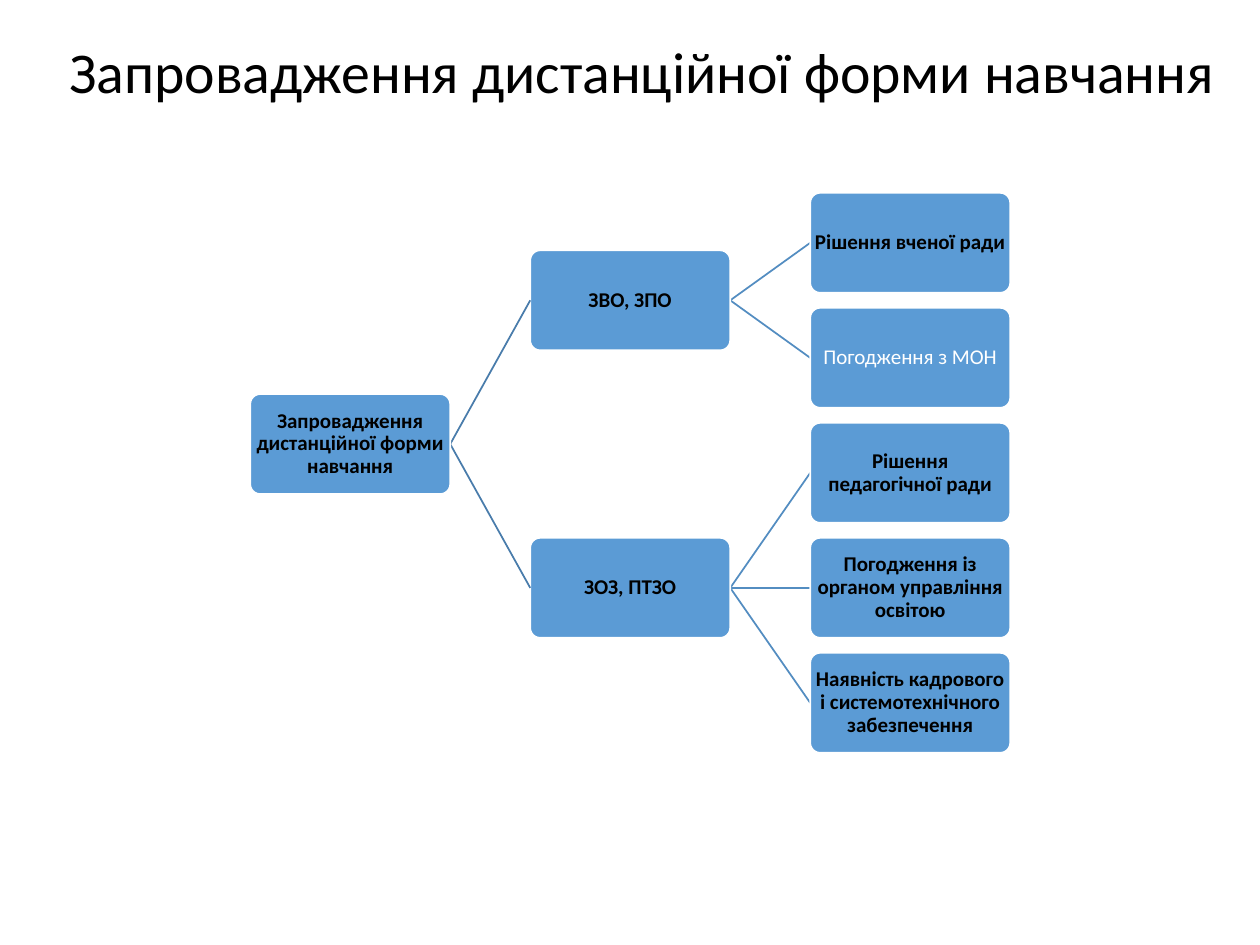
from lxml import etree
from pptx import Presentation
from pptx.dml.color import RGBColor
from pptx.enum.shapes import MSO_CONNECTOR, MSO_SHAPE
from pptx.enum.text import MSO_ANCHOR, PP_ALIGN
from pptx.oxml.ns import qn
from pptx.util import Pt

ROUNDED = MSO_SHAPE.ROUNDED_RECTANGLE
STRAIGHT = MSO_CONNECTOR.STRAIGHT
MIDDLE = MSO_ANCHOR.MIDDLE
CENTER = PP_ALIGN.CENTER

FONT = "Calibri"
COLORS = {"box": "5B9BD5", "white": "FFFFFF", "black": "000000",
          "root_link": "497CAB", "leaf_link": "538DC1"}

TITLE = "Запровадження дистанційної форми навчання"
APPROVAL = "Погодження з МОН"
BRANCHES = [
    ("ЗВО, ЗПО", ["Рішення вченої ради", APPROVAL]),
    ("ЗОЗ, ПТЗО", ["Рішення педагогічної ради",
                   "Погодження із органом управління освітою",
                   "Наявність кадрового і системотехнічного забезпечення"]),
]

BOX_W, BOX_H = 114.3, 57.15
COL_STEP, ROW_STEP = 160, 65.72


def rgb(name):
    return RGBColor.from_string(COLORS[name])


def set_text(tf, text, size, color="black", bold=False, inset=0.7):
    tf.word_wrap = True
    tf.vertical_anchor = MIDDLE
    tf.margin_left = tf.margin_right = Pt(inset)
    tf.margin_top = tf.margin_bottom = Pt(inset)
    tf.text = text
    p = tf.paragraphs[0]
    p.alignment = CENTER
    p.line_spacing = 0.9
    font = p.runs[0].font
    font.name, font.size, font.bold = FONT, Pt(size), bold
    font.color.rgb = rgb(color)


def add_title(s, x, y, w, h):
    sp = s.shapes.add_textbox(Pt(x), Pt(y), Pt(w), Pt(h))
    set_text(sp.text_frame, TITLE, 33, inset=3.6)


def add_node(s, x, mid, text):
    """Place a box with its left edge at x, centred vertically on mid."""
    sp = s.shapes.add_shape(ROUNDED, Pt(x), Pt(mid - BOX_H / 2), Pt(BOX_W), Pt(BOX_H))
    sp.adjustments[0] = 0.1
    sp.shadow.inherit = False
    sp.fill.solid()
    sp.fill.fore_color.rgb = rgb("box")
    sp.line.color.rgb = rgb("white")
    sp.line.width = Pt(1)
    plain = text == APPROVAL
    set_text(sp.text_frame, text, 12, "white" if plain else "black", not plain)


def add_link(s, parent_x, parent_mid, child_mid, color):
    """Join a parent's right edge to the left edge of a child one column on."""
    line = s.shapes.add_connector(STRAIGHT, Pt(parent_x + BOX_W), Pt(parent_mid),
                                  Pt(parent_x + COL_STEP), Pt(child_mid))
    line.line.color.rgb = rgb(color)
    line.line.width = Pt(1)
    etree.SubElement(line._element.spPr, qn("a:effectLst"))


def add_tree(s, x, y):
    """Draw the tree from left to right; each parent is centred on its children."""
    branch_x, leaf_x = x + COL_STEP, x + 2 * COL_STEP
    leaf_mid = y + BOX_H / 2
    branch_mids = []
    for branch, leaves in BRANCHES:
        mid = leaf_mid + ROW_STEP * (len(leaves) - 1) / 2
        branch_mids.append(mid)
        for leaf in leaves:
            add_link(s, branch_x, mid, leaf_mid, "leaf_link")
            add_node(s, leaf_x, leaf_mid, leaf)
            leaf_mid += ROW_STEP
        add_node(s, branch_x, mid, branch)
    root_mid = sum(branch_mids) / len(branch_mids)
    for mid in branch_mids:
        add_link(s, x, root_mid, mid, "root_link")
    add_node(s, x, root_mid, TITLE)


def main():
    prs = Presentation()
    prs.slide_width, prs.slide_height = Pt(720), Pt(540)
    s = prs.slides.add_slide(prs.slide_layouts[6])
    add_title(s, 25, 9.5, 684, 66)
    add_tree(s, 143, 110.2)
    prs.save("out.pptx")


if __name__ == "__main__":
    main()
